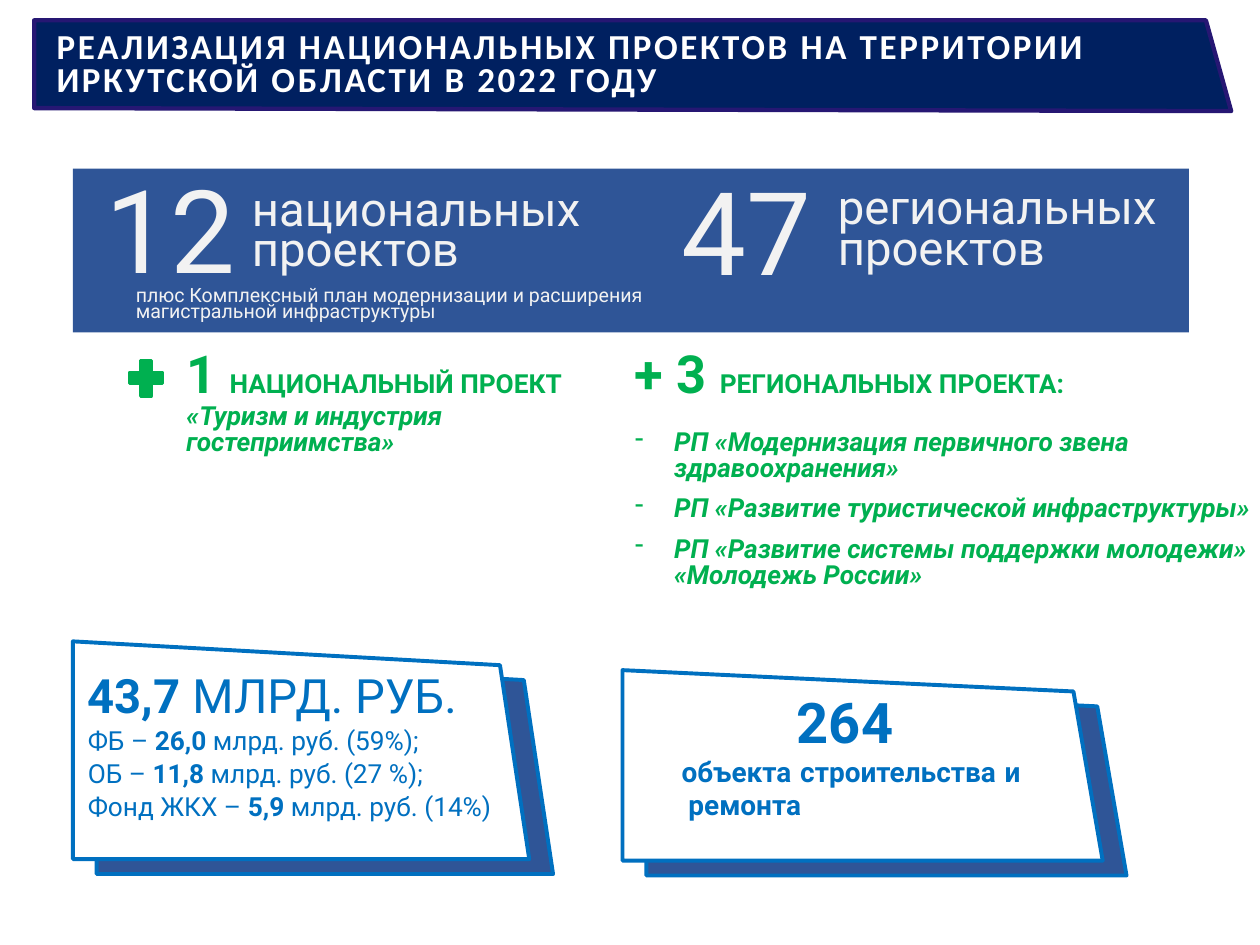
from lxml.etree import SubElement
from pptx import Presentation
from pptx.dml.color import RGBColor
from pptx.enum.shapes import MSO_SHAPE as Shape
from pptx.enum.text import PP_ALIGN as Align
from pptx.oxml.ns import qn
from pptx.util import Cm, Pt

COLORS = {"navy": "002060", "violet": "261773", "blue": "2F5597", "azure": "0070C0",
          "green": "00B050", "pale": "F2F2F2", "white": "FFFFFF"}

# Content: a paragraph is a list of (text, size, bold) runs
TITLE = "РЕАЛИЗАЦИЯ НАЦИОНАЛЬНЫХ ПРОЕКТОВ НА ТЕРРИТОРИИ ИРКУТСКОЙ ОБЛАСТИ В 2022 ГОДУ"
BAND_NOTE = "плюс Комплексный план модернизации и расширения магистральной инфраструктуры"
# number, its box corner, kind, its box corner
COUNTS = [("12", (0.38, 4.47), "национальных", (4.83, 3.81)),
          ("47", (11.99, 4.52), "региональных", (16.64, 3.78))]
NEW_NATIONAL = [("1 ", 30, True), ("НАЦИОНАЛЬНЫЙ ПРОЕКТ", 15, True)]
NATIONAL_NAME = "«Туризм и индустрия гостеприимства»"
NEW_REGIONAL = [("+ 3 ", 30, True), ("РЕГИОНАЛЬНЫХ ПРОЕКТА:", 15, True)]
REGIONAL_NAMES = ["РП «Модернизация первичного звена здравоохранения»",
                  "РП «Развитие туристической инфраструктуры»",
                  "РП «Развитие системы поддержки молодежи» «Молодежь России»"]
FUNDING_TOTAL = [("43,7 ", 27, True), ("МЛРД. РУБ.", 27, False)]
FUNDING = [("ФБ – ", "26,0", " млрд. руб. (59%);"),
           ("ОБ – ", "11,8", " млрд. руб. (27 %);"),
           ("Фонд ЖКХ – ", "5,9", " млрд. руб. (14%)")]
SITES_COUNT = [("264", 32, True), (" ", 28, True)]
SITES_LABEL = "объекта строительства и  ремонта"

# Outlines in cm
TITLE_PLATE = [(24.82, 2.24), (0.69, 2.18), (0.69, 0.41), (24.31, 0.41)]
SHEETS = [[(1.47, 12.93), (10.08, 13.41), (10.67, 17.32), (1.47, 17.32)],
          [(12.55, 13.51), (21.64, 13.94), (22.23, 17.35), (12.55, 17.35)]]
SHEET_OFFSET = (0.48, 0.3)

prs = Presentation()
prs.slide_width, prs.slide_height = Cm(25.4), Cm(19.05)
slide = prs.slides.add_slide(prs.slide_layouts[6])
shapes = slide.shapes


def rgb(name):
    return RGBColor.from_string(COLORS[name])


def paint(shape, fill, line=None, width=0):
    shape.shadow.inherit = False
    shape.fill.solid()
    shape.fill.fore_color.rgb = rgb(fill)
    if line:
        shape.line.color.rgb = rgb(line)
        shape.line.width = Pt(width)
        SubElement(shape.line._ln, qn("a:round"))
    else:
        shape.line.fill.background()


def outline(points, fill, line, width):
    first, *rest = [(Cm(x), Cm(y)) for x, y in points]
    builder = shapes.build_freeform(*first)
    builder.add_line_segments(rest, close=True)
    paint(builder.convert_to_shape(), fill, line, width)


def text_box(left, top, width, height):
    frame = shapes.add_textbox(Cm(left), Cm(top), Cm(width), Cm(height)).text_frame
    frame.word_wrap = True
    return frame


def write(frame, runs, color, spacing, italic=None, align=None, before=0, font="Roboto"):
    paragraph = frame.paragraphs[0]
    if paragraph.runs:
        paragraph = frame.add_paragraph()
    paragraph.line_spacing = Pt(spacing)
    paragraph.space_before = Pt(before)
    paragraph.alignment = align
    paragraph.font.name = font
    paragraph.font.italic = italic
    paragraph.font.color.rgb = rgb(color)
    same_size = len({size for _, size, _ in runs}) == 1
    same_bold = len({bold for _, _, bold in runs}) == 1
    if same_size:
        paragraph.font.size = Pt(runs[0][1])
    if same_bold:
        paragraph.font.bold = runs[0][2]
    for text, size, bold in runs:
        run = paragraph.add_run()
        run.text = text
        if not same_size:
            run.font.size = Pt(size)
        if not same_bold:
            run.font.bold = bold
    return paragraph


def add_dash(paragraph):
    props = paragraph._p.get_or_add_pPr()
    props.set("marL", str(Cm(0.79)))
    props.set("indent", str(-Cm(0.79)))
    bullet = props.makeelement(qn("a:buChar"), {"char": "-"})
    props.find(qn("a:defRPr")).addprevious(bullet)


# New national project
national = text_box(3.51, 7.14, 9.02, 3.1)
write(national, NEW_NATIONAL, "green", 25)
write(national, [(NATIONAL_NAME, 15, True)], "green", 15, italic=True)
plus = shapes.add_shape(Shape.MATH_PLUS, Cm(2.49), Cm(7.14), Cm(0.91), Cm(0.97))
paint(plus, "green", "green", 2)

# New regional projects
regional = text_box(12.55, 7.14, 13.16, 5.46)
write(regional, NEW_REGIONAL, "green", 25)
for index, name in enumerate(REGIONAL_NAMES):
    add_dash(write(regional, [(name, 15, True)], "green", 15, italic=True,
                   before=8 if index else 15))

# Sheets, each with a darker one behind
dx, dy = SHEET_OFFSET
for sheet in SHEETS:
    outline([(x + dx, y + dy) for x, y in sheet], "blue", "azure", 2.25)
    outline(sheet, "white", "azure", 2.25)

# Funding
funding = text_box(1.52, 13.79, 8.81, 2.97)
write(funding, FUNDING_TOTAL, "azure", 18.8)
for source, amount, rest in FUNDING:
    write(funding, [(source, 15, False), (amount, 15, True), (rest, 15, False)], "azure", 18.8)

# Construction sites
sites = text_box(13.49, 14.43, 7.34, 2.29)
write(sites, SITES_COUNT, "azure", 18.8, align=Align.CENTER)
write(sites, [(SITES_LABEL, 16, True)], "azure", 18.8, align=Align.JUSTIFY)

# Band with project counts
band = shapes.add_shape(Shape.RECTANGLE, Cm(1.47), Cm(3.4), Cm(22.5), Cm(3.3))
paint(band, "blue")
for number, number_at, kind, kind_at in COUNTS:
    write(text_box(*number_at, 6.1, 1.65), [(number, 66, False)], "pale", 39,
          align=Align.CENTER)
    label = text_box(*kind_at, 7.65, 1.91)
    for line in (kind, "проектов"):
        write(label, [(line, 27, False)], "pale", 23.2)
write(text_box(2.49, 5.74, 11.91, 0.89), [(BAND_NOTE, 11.2, False)], "pale", 9)

# Title
outline(TITLE_PLATE, "navy", "violet", 2.47)
title = write(text_box(0.89, 0.56, 25.4, 1.63), [(TITLE, 20, True)], "white", 18.8,
              font="Calibri")
title.runs[0].font._element.set("spc", "150")

prs.save("out.pptx")
